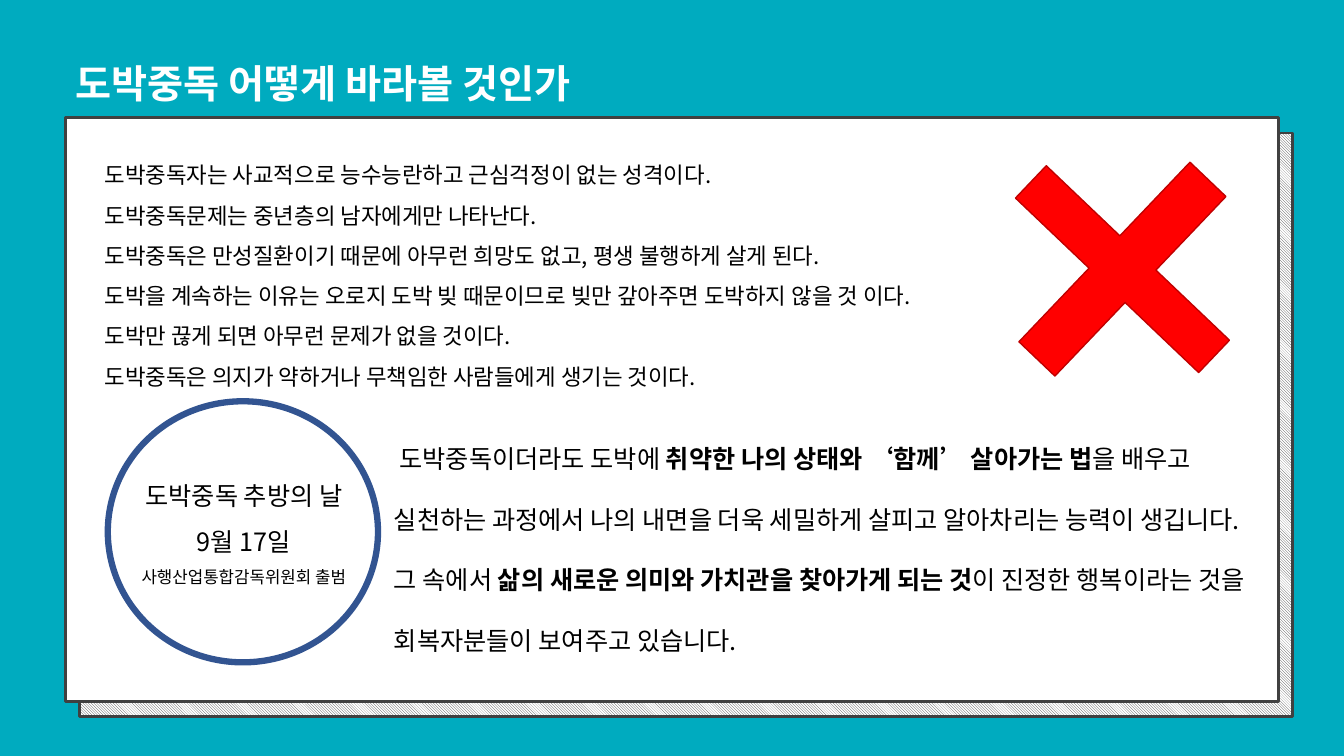
from lxml import etree
from pptx import Presentation
from pptx import util as u
from pptx.dml.color import RGBColor
from pptx.enum import dml, shapes, text
from pptx.oxml import ns

COLORS = {
    "teal": "00ABBF",
    "white": "FFFFFF",
    "black": "000000",
    "charcoal": "404040",
    "navy": "325491",
    "red": "FF0000",
    "dark_red": "C00000",
}

MYTHS = [
    "도박중독자는 사교적으로 능수능란하고 근심걱정이 없는 성격이다.",
    "도박중독문제는 중년층의 남자에게만 나타난다.",
    "도박중독은 만성질환이기 때문에 아무런 희망도 없고, 평생 불행하게 살게 된다.",
    "도박을 계속하는 이유는 오로지 도박 빚 때문이므로 빚만 갚아주면 도박하지 않을 것 이다.",
    "도박만 끊게 되면 아무런 문제가 없을 것이다.",
    "도박중독은 의지가 약하거나 무책임한 사람들에게 생기는 것이다.",
]

RECOVERY = [
    (" 도박중독이더라도 도박에 ", False),
    ("취약한 나의 상태와 ‘함께’ 살아가는 법", True),
    ("을 배우고 실천하는 과정에서 나의 내면을 더욱 세밀하게 살피고 "
     "알아차리는 능력이 생깁니다. 그 속에서 ", False),
    ("삶의 새로운 의미와 가치관을 찾아가게 되는 것", True),
    ("이 진정한 행복이라는 것을 회복자분들이 보여주고 있습니다.", False),
]


def color(name):
    return RGBColor.from_string(COLORS[name])


def add_span(para, words, *, size, ink="black", bold=False, font="Noto Sans CJK KR"):
    """Append a run, with its font set for Latin and Korean letters."""
    span = para.add_run()
    span.text = words
    span.font.size = u.Pt(size)
    span.font.bold = bold
    span.font.name = font
    span.font.color.rgb = color(ink)
    korean = etree.SubElement(span.font._element, ns.qn("a:ea"))
    korean.set("typeface", font)


class Page:
    def __init__(self, deck, background):
        self.slide = deck.slides.add_slide(deck.slide_layouts[6])
        self.slide.background.fill.solid()
        self.slide.background.fill.fore_color.rgb = color(background)

    def shape(self, kind, frame, *, line, weight, fill=None, hatch=None):
        """Draw a preset shape; hatch is the colour of stripes over the fill."""
        item = self.slide.shapes.add_shape(kind, *map(u.Pt, frame))
        item.shadow.inherit = False
        item.line.color.rgb = color(line)
        item.line.width = u.Pt(weight)
        if hatch:
            item.fill.patterned()
            item.fill.pattern = dml.MSO_PATTERN.DARK_DOWNWARD_DIAGONAL
            item.fill.fore_color.rgb = color(hatch)
            item.fill.back_color.rgb = color(fill)
        elif fill:
            item.fill.solid()
            item.fill.fore_color.rgb = color(fill)
        else:
            item.fill.background()
        return item

    def textbox(self, frame, *, spacing=1.5, align=text.PP_ALIGN.LEFT):
        """Add a wrapping box and return a function that adds its paragraphs."""
        box = self.slide.shapes.add_textbox(*map(u.Pt, frame)).text_frame
        box.word_wrap = True
        box.auto_size = text.MSO_AUTO_SIZE.SHAPE_TO_FIT_TEXT
        unused = [box.paragraphs[0]]

        def add_para():
            para = unused.pop() if unused else box.add_paragraph()
            para.line_spacing = spacing
            para.alignment = align
            return para

        return add_para


def main():
    deck = Presentation()
    deck.slide_width, deck.slide_height = u.Pt(960), u.Pt(540)
    page = Page(deck, "teal")
    preset = shapes.MSO_SHAPE

    panel_size = (866.2, 416.9)
    page.shape(preset.RECTANGLE, (56.9, 95, *panel_size),
               line="charcoal", weight=2, fill="white", hatch="charcoal")
    page.shape(preset.RECTANGLE, (46.8, 84.2, *panel_size),
               line="charcoal", weight=2, fill="white")

    title = page.textbox((46.8, 22.3, 499.7, 51.8))
    add_span(title(), "도박중독 어떻게 바라볼 것인가", size=28, ink="white", bold=True)

    myths = page.textbox((67.7, 102.2, 745.9, 181.4))
    for myth in MYTHS:
        add_span(myths(), myth, size=16)

    page.shape(preset.OVAL, (77, 286.6, 193, 186.5), line="navy", weight=4.5)
    event = page.textbox((76.3, 329, 195.8, 109.4), align=text.PP_ALIGN.CENTER)
    for words, size in [("도박중독 추방의 날", 18), ("9월 17일", 18),
                        ("사행산업통합감독위원회 출범", 12)]:
        add_span(event(), words, size=size)

    cross = page.shape(preset.CROSS, (711.4, 103.7, 180.7, 177.1),
                       line="dark_red", weight=1, fill="red")
    cross.adjustments[0] = 0.41
    cross.rotation = 43.6

    recovery = page.textbox((274.3, 291.6, 628.6, 175), spacing=2.0)()
    for words, bold in RECOVERY:
        add_span(recovery, words, size=18, bold=bold)

    deck.save("out.pptx")


if __name__ == "__main__":
    main()
